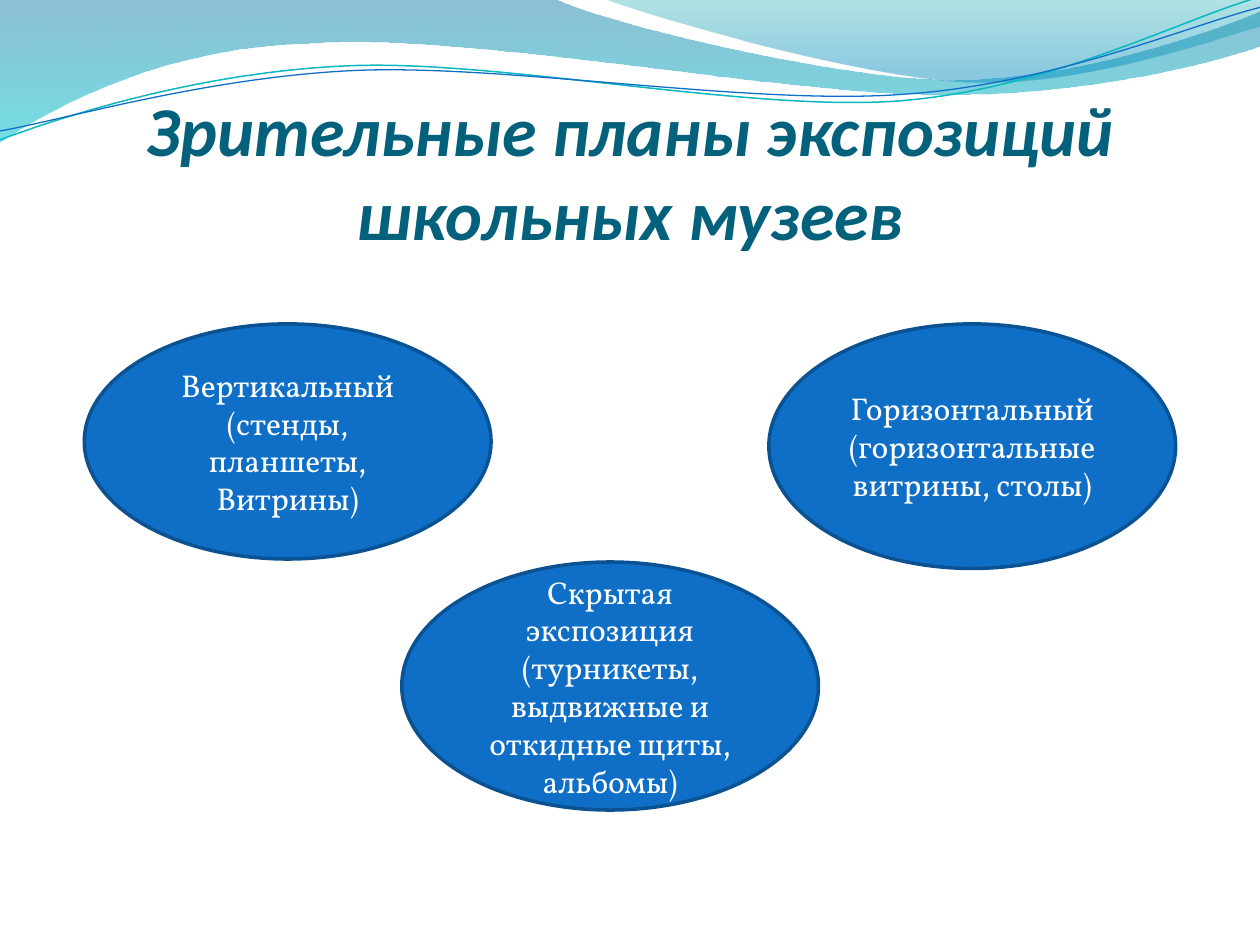
import dataclasses

import lxml.etree
import pptx
import pptx.dml.color
import pptx.enum.shapes
import pptx.enum.text
import pptx.oxml.ns
import pptx.util

Cm = pptx.util.Cm
Pt = pptx.util.Pt
qn = pptx.oxml.ns.qn


@dataclasses.dataclass(frozen=True)
class Theme:
    heading_font: str = "Calibri"
    body_font: str = "Vollkorn"
    heading_size: float = 40
    body_size: float = 18
    heading: str = "04617B"
    white: str = "FFFFFF"
    blue: str = "0F6FC6"
    dark_blue: str = "0B5292"
    teal: str = "0AB8BF"
    wide_wave: tuple = ((0, "0074A1", 45), (1, "00C6CF", 55))
    small_wave: tuple = ((0, "00A1A9", 30), (0.8, "008BBF", 45))


WIDE_WAVE = [
    [(0, 0)],
    [(11.18, -0.03)],
    [(12.09, 0.43), (16.87, 1.6), (19.25, 1.6)],
    [(21.67, 1.6), (24.33, 0.66), (25.4, 0.23)],
    [(25.43, 0.91)],
    [(24.97, 1.12), (22.1, 1.93), (18.95, 1.91)],
    [(15.8, 1.91), (9.7, 0.71), (6.53, 0.86)],
    [(3.28, 0.91), (1.17, 2.11), (-0.03, 2.87)],
    [(0, 0)],
]
SMALL_WAVE = [
    [(12.17, -0.03)],
    [(12.93, 0.28), (17.32, 1.57), (19.53, 1.65)],
    [(21.74, 1.75), (24.41, 0.81), (25.4, 0.53)],
    [(25.4, 0)],
    [(12.17, -0.03)],
]
TEAL_LINE = [
    [(-0.05, 2.22)],
    [(1.19, 1.82), (4.02, 1.04), (7.05, 1.06)],
    [(10.05, 1.07), (15.02, 2.37), (18.08, 2.29)],
    [(21.13, 2.2), (23.86, 0.91), (25.41, 0.55)],
]
BLUE_LINE = [
    [(-0.04, 2.04)],
    [(1.16, 1.9), (4.17, 1.15), (7.2, 1.16)],
    [(10.25, 1.18), (15.13, 2.25), (18.19, 2.16)],
    [(21.22, 2.1), (23.93, 1.06), (25.45, 0.75)],
]
LINE_ROTATION = 357.3
PLANS = [
    ((8.1, 11.33, 8.4, 5),
     ["Скрытая экспозиция", "(турникеты, выдвижные и откидные щиты, альбомы)"]),
    ((1.7, 6.53, 8.2, 4.74),
     ["Вертикальный (стенды, планшеты,", "Витрины)"]),
    ((15.5, 6.53, 8.2, 4.93),
     ["Горизонтальный", "(горизонтальные витрины, столы)"]),
]


def rgb(value):
    return pptx.dml.color.RGBColor.from_string(value)


def write_text(frame, paragraphs, *, font, size, color, bold=False, italic=False,
               anchor=pptx.enum.text.MSO_ANCHOR.MIDDLE):
    frame.word_wrap = True
    frame.vertical_anchor = anchor
    for index, text in enumerate(paragraphs):
        paragraph = frame.add_paragraph() if index else frame.paragraphs[0]
        paragraph.alignment = pptx.enum.text.PP_ALIGN.CENTER
        run = paragraph.add_run()
        run.text = text
        run.font.name = font
        run.font.size = Pt(size)
        run.font.bold = bold
        run.font.italic = italic
        run.font.color.rgb = rgb(color)


class SlideBuilder:
    def __init__(self, slide, theme):
        self.slide = slide
        self.theme = theme

    def outline(self, segments, close):
        start, *rest = [(Cm(x), Cm(y)) for segment in segments for x, y in segment]
        builder = self.slide.shapes.build_freeform(*start)
        builder.add_line_segments(rest, close=close)
        shape = builder.convert_to_shape()
        shape.shadow.inherit = False
        steps = iter(list(shape.element.spPr.iter(qn("a:lnTo"))))
        for segment in segments[1:]:
            first, *others = [next(steps) for _ in segment]
            if others:
                bezier = lxml.etree.Element(qn("a:cubicBezTo"))
                first.addprevious(bezier)
                for step in (first, *others):
                    bezier.append(step[0])
                    step.getparent().remove(step)
        return shape

    def wave(self, segments, stops):
        shape = self.outline(segments, close=True)
        shape.line.fill.background()
        shape.fill.gradient()
        shape.fill.gradient_angle = 270
        for stop, (position, color, _) in zip(shape.fill.gradient_stops, stops):
            stop.position = position
            stop.color.rgb = rgb(color)
        colors = list(shape.element.spPr.iter(qn("a:srgbClr")))
        for element, (_, _, opacity) in zip(colors, stops):
            alpha = lxml.etree.SubElement(element, qn("a:alpha"))
            alpha.set("val", str(opacity * 1000))

    def curve(self, segments, color, width):
        shape = self.outline(segments, close=False)
        shape.rotation = LINE_ROTATION
        shape.fill.background()
        shape.line.color.rgb = rgb(color)
        shape.line.width = Pt(width)

    def title(self, text, box):
        shape = self.slide.shapes.add_textbox(*map(Cm, box))
        frame = shape.text_frame
        frame.margin_left = frame.margin_right = frame.margin_bottom = 0
        write_text(frame, [text], font=self.theme.heading_font,
                   size=self.theme.heading_size, color=self.theme.heading,
                   bold=True, italic=True, anchor=pptx.enum.text.MSO_ANCHOR.BOTTOM)

    def ellipse(self, paragraphs, box):
        shape = self.slide.shapes.add_shape(
            pptx.enum.shapes.MSO_SHAPE.OVAL, *map(Cm, box))
        shape.shadow.inherit = False
        shape.fill.solid()
        shape.fill.fore_color.rgb = rgb(self.theme.blue)
        shape.line.color.rgb = rgb(self.theme.dark_blue)
        shape.line.width = Pt(2)
        write_text(shape.text_frame, paragraphs, font=self.theme.body_font,
                   size=self.theme.body_size, color=self.theme.white)


def main():
    presentation = pptx.Presentation()
    presentation.slide_width = Cm(25.4)
    presentation.slide_height = Cm(19.05)
    slide = presentation.slides.add_slide(presentation.slide_layouts[6])
    theme = Theme()
    builder = SlideBuilder(slide, theme)
    builder.wave(WIDE_WAVE, theme.wide_wave)
    builder.wave(SMALL_WAVE, theme.small_wave)
    builder.curve(TEAL_LINE, theme.teal, 0.85)
    builder.curve(BLUE_LINE, theme.blue, 0.75)
    builder.title("Зрительные планы экспозиций школьных музеев",
                  (1.27, 1.96, 22.86, 3.18))
    for box, paragraphs in PLANS:
        builder.ellipse(paragraphs, box)
    presentation.save("out.pptx")


if __name__ == "__main__":
    main()
